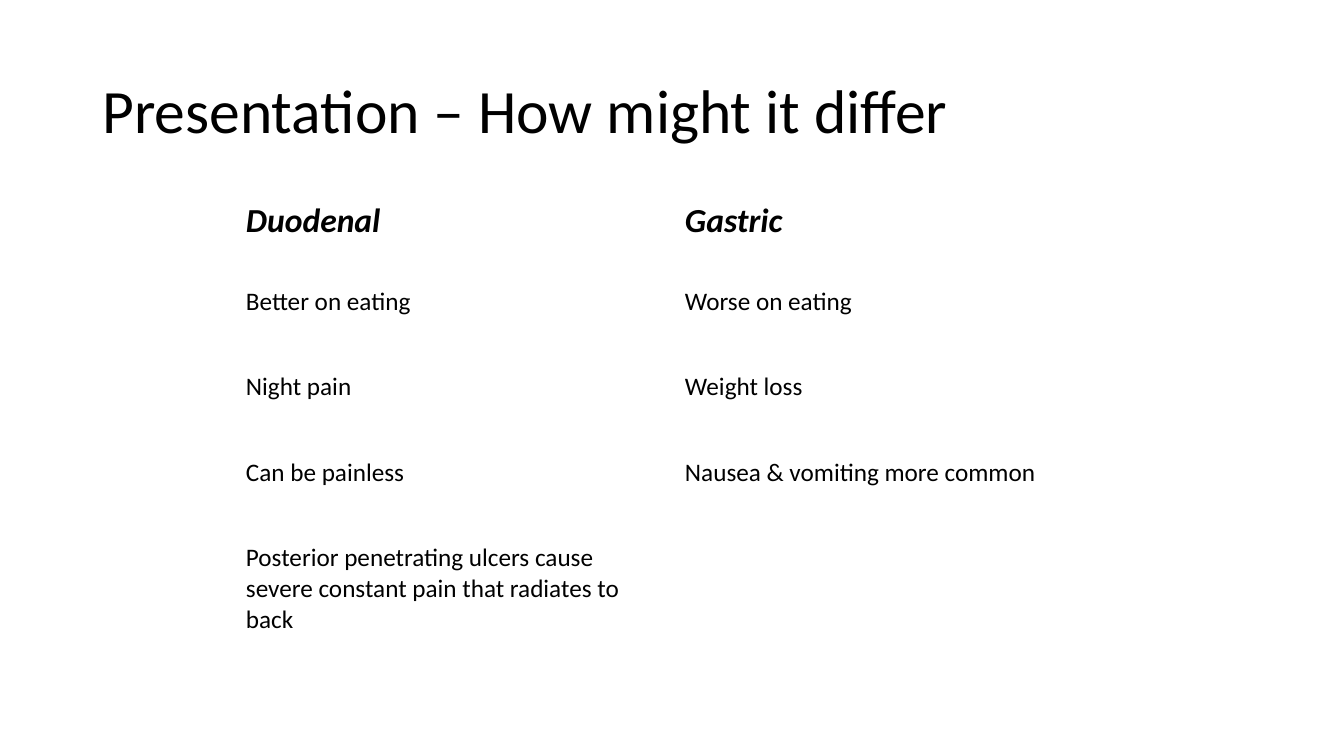
from dataclasses import dataclass

from pptx import Presentation
from pptx.dml.color import RGBColor
from pptx.enum import text
from pptx.util import Pt


@dataclass(frozen=True)
class Theme:
    font: str = "Calibri"
    ink: RGBColor = RGBColor(0, 0, 0)
    title: int = 44
    heading: int = 24
    body: int = 18


THEME = Theme()

SYMPTOMS = [
    ("Duodenal", "Gastric"),
    ("Better on eating", "Worse on eating"),
    ("Night pain", "Weight loss"),
    ("Can be painless", "Nausea & vomiting more common"),
    ("Posterior penetrating ulcers cause severe constant pain that radiates to back", ""),
]


def style_text(p, size, emphasis=False):
    for r in p.runs:
        r.font.name = THEME.font
        r.font.size = Pt(size)
        r.font.color.rgb = THEME.ink
        r.font.bold = emphasis
        r.font.italic = emphasis


def add_title(slide, title):
    sp = slide.shapes.add_textbox(Pt(66), Pt(28.8), Pt(828), Pt(104.4))
    tf = sp.text_frame
    tf.word_wrap = True
    tf.vertical_anchor = text.MSO_ANCHOR.MIDDLE
    tf.text = title
    p = tf.paragraphs[0]
    p.line_spacing = 0.9
    style_text(p, THEME.title)


def add_comparison(slide, rows):
    col_width, row_height = 313.6, 61.1
    cols = len(rows[0])
    frame = slide.shapes.add_table(
        len(rows), cols, Pt(168.5), Pt(139.7),
        Pt(col_width * cols), Pt(row_height * len(rows)))
    table = frame.table
    table.first_row = False
    table.horz_banding = False
    for i, row in enumerate(rows):
        for j, entry in enumerate(row):
            cell = table.cell(i, j)
            cell.fill.background()
            if entry:
                cell.text = entry
                style_text(cell.text_frame.paragraphs[0],
                           THEME.body if i else THEME.heading, emphasis=i == 0)


def main():
    prs = Presentation()
    prs.slide_width, prs.slide_height = Pt(960), Pt(540)
    slide = prs.slides.add_slide(prs.slide_layouts[6])
    add_title(slide, "Presentation – How might it differ")
    add_comparison(slide, SYMPTOMS)
    prs.save("out.pptx")


if __name__ == "__main__":
    main()
